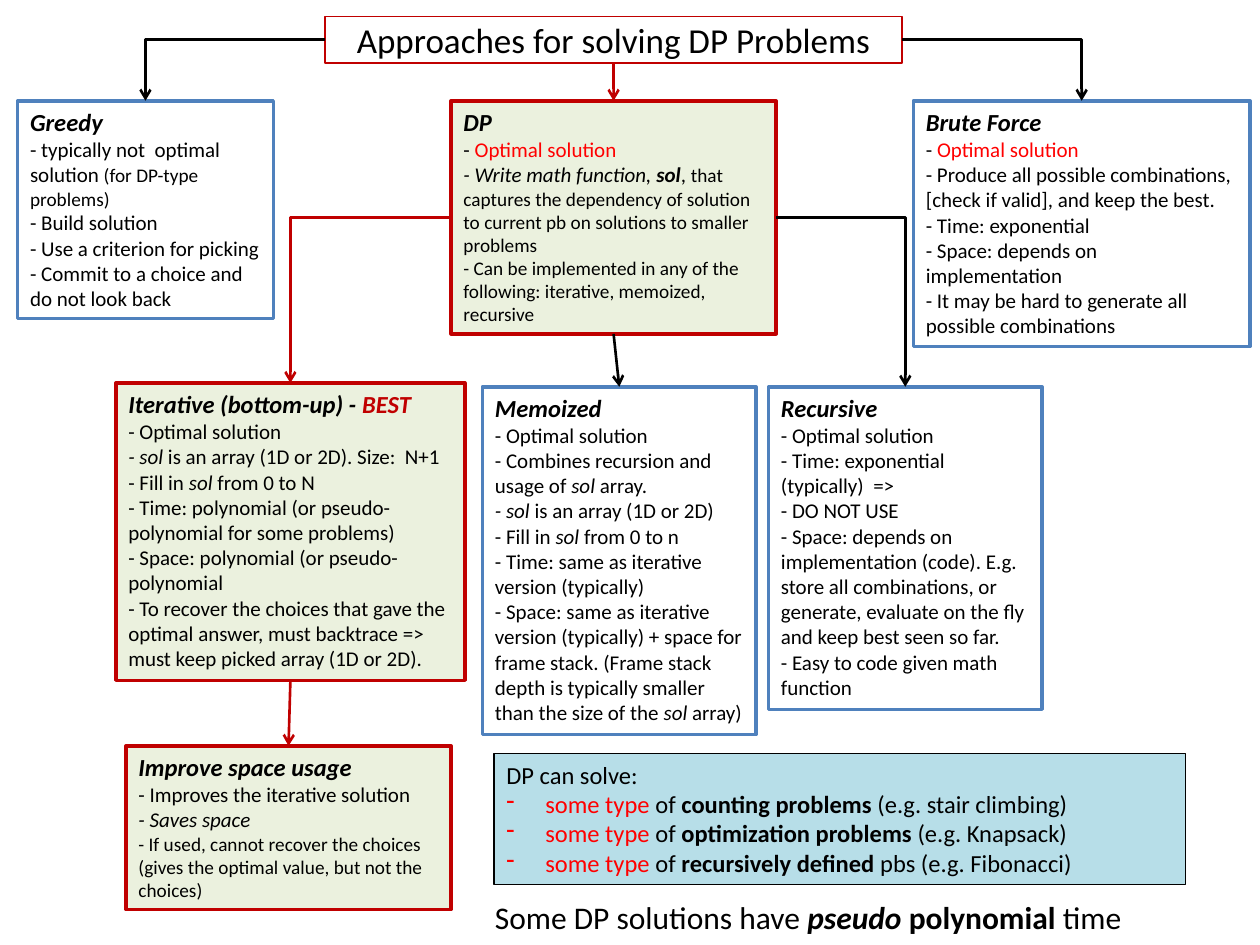
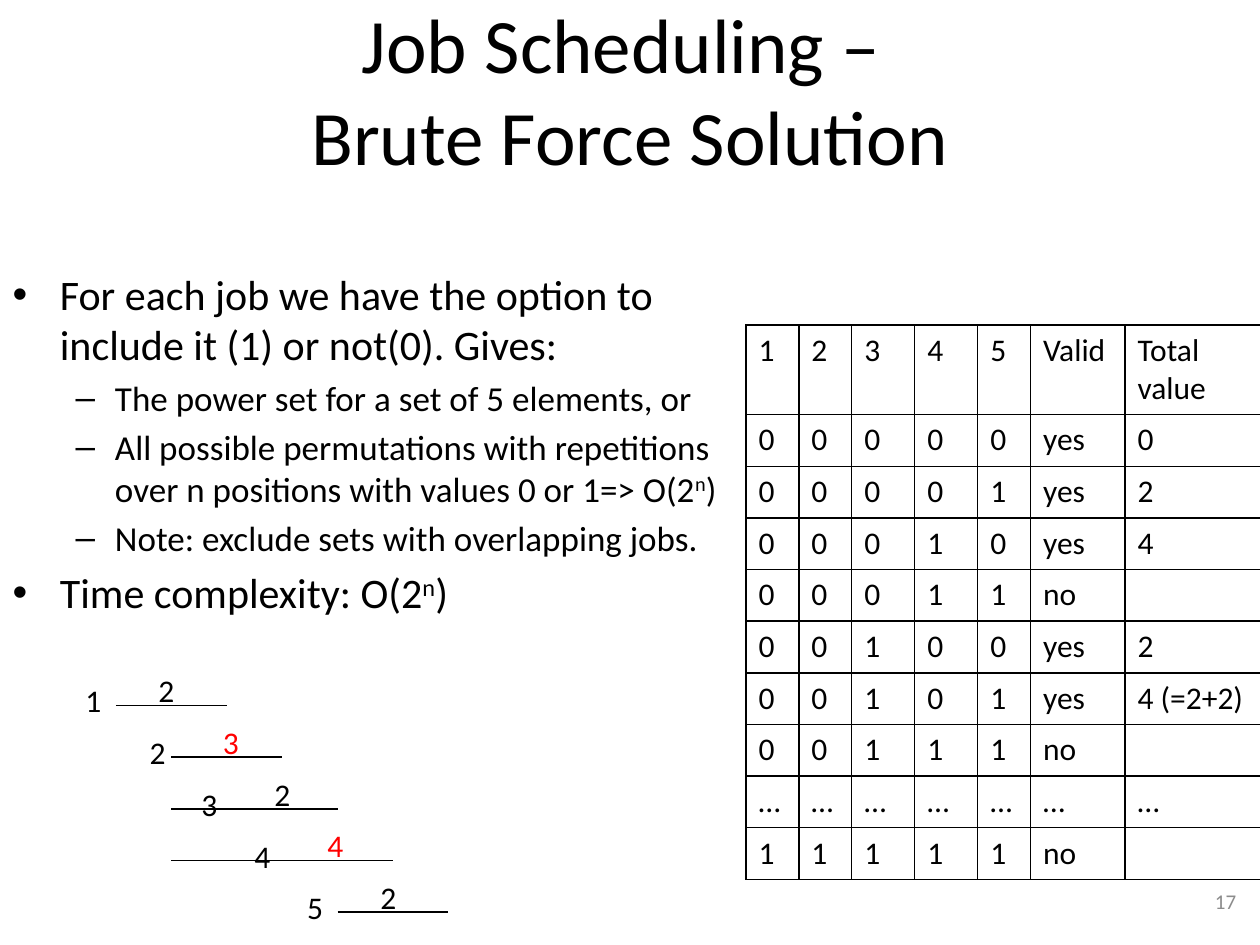
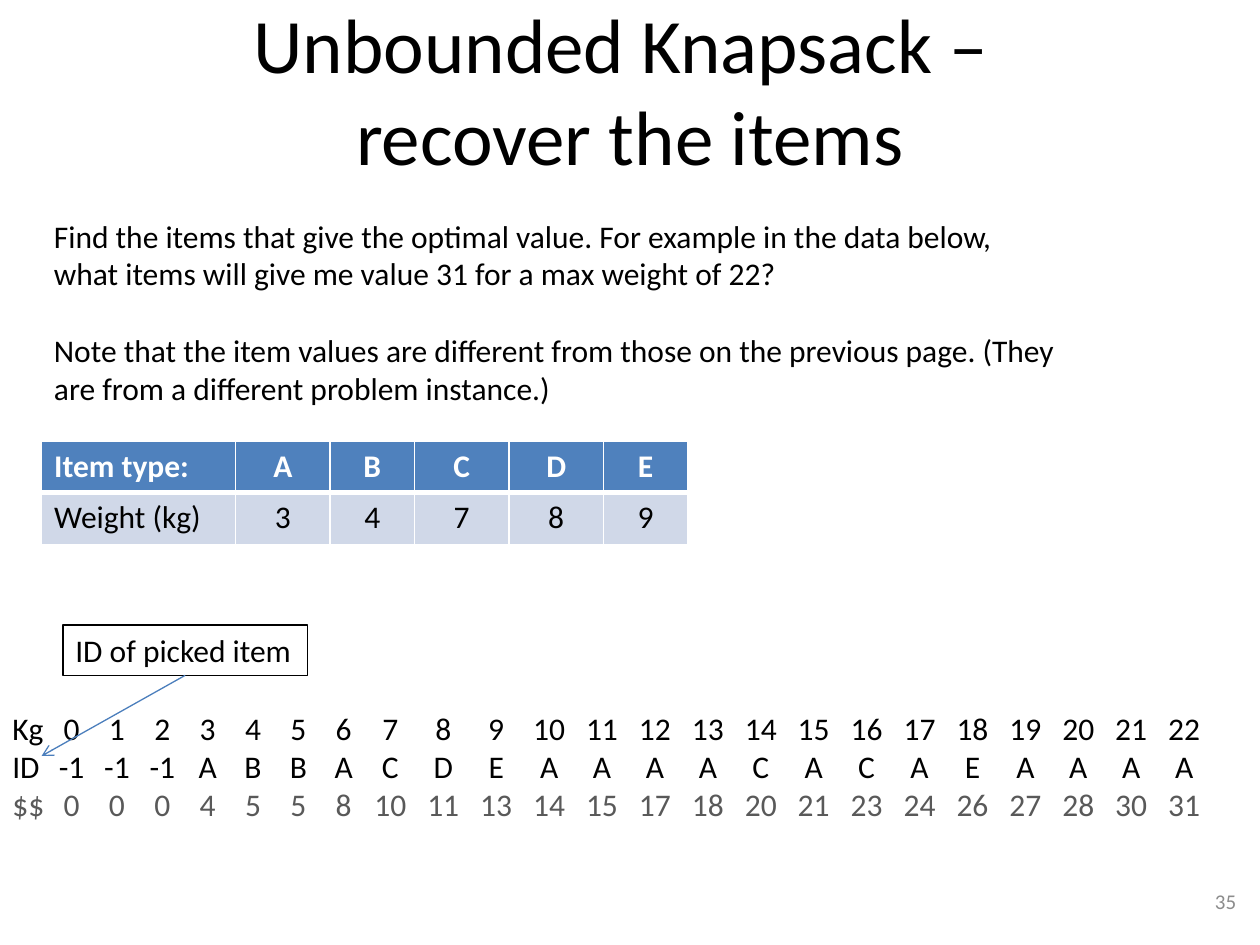
from lxml import etree
from pptx import Presentation
from pptx.dml.color import RGBColor
from pptx.enum.shapes import MSO_CONNECTOR, MSO_SHAPE
from pptx.enum.text import MSO_ANCHOR, MSO_AUTO_SIZE, PP_ALIGN
from pptx.oxml.ns import qn
from pptx.util import Inches, Pt

FONT = "Calibri"
BLACK, WHITE, RED = "000000", "FFFFFF", "FF0000"
BLUE, DARK_RED, PALE_GREEN = "4F81BD", "C00000", "EBF1DE"
PALE_BLUE, CYAN, GRAY, DARK_GRAY = "D0D8E8", "B7DEE8", "8C8C8C", "595959"
PLAIN_TABLE_STYLE = "{2D5ABB26-0587-4C30-8999-92F81FD0307C}"
TOP, LEFT, BOTTOM, RIGHT = range(4)
ITALIC = {"italic": True}
BOLD = {"bold": True}
SMALL = {"size": 11}
RED_TEXT = {"color": RED}
SUPERSCRIPT = {"superscript": True}


def rgb(color):
    return RGBColor.from_string(color)


def box_lengths(box):
    return [Inches(length) for length in box]


def place(shape, box):
    shape.left, shape.top, shape.width, shape.height = box_lengths(box)


def add_run(paragraph, text, size=12, color=BLACK, bold=False, italic=False, superscript=False):
    run = paragraph.add_run()
    run.text = text
    run.font.name = FONT
    run.font.size = Pt(size)
    run.font.color.rgb = rgb(color)
    run.font.bold = bold
    run.font.italic = italic
    if superscript:
        run.font._element.set("baseline", "30000")


def write_runs(paragraph, runs, **style):
    """Write one string, or a list of strings and (string, style) pairs."""
    for run in [runs] if isinstance(runs, str) else runs:
        text, own_style = (run, {}) if isinstance(run, str) else run
        add_run(paragraph, text, **{**style, **own_style})


def write_text(text_frame, lines, align=None, **style):
    for index, runs in enumerate(lines):
        paragraph = text_frame.add_paragraph() if index else text_frame.paragraphs[0]
        paragraph.alignment = align
        write_runs(paragraph, runs, **style)


def add_text(slide, box, lines, wrap=True, **style):
    text_box = slide.shapes.add_textbox(*box_lengths(box))
    text_box.text_frame.word_wrap = wrap
    text_box.text_frame.auto_size = MSO_AUTO_SIZE.SHAPE_TO_FIT_TEXT
    write_text(text_box.text_frame, lines, **style)
    return text_box


def add_frame(slide, box, line, width, fill=None, wrap=True):
    """Add an outlined rectangle ready for left-aligned text."""
    shape = slide.shapes.add_shape(MSO_SHAPE.RECTANGLE, *box_lengths(box))
    shape.shadow.inherit = False
    if fill:
        shape.fill.solid()
        shape.fill.fore_color.rgb = rgb(fill)
    else:
        shape.fill.background()
    shape.line.color.rgb = rgb(line)
    shape.line.width = Pt(width)
    text_frame = shape.text_frame
    text_frame.word_wrap = wrap
    text_frame.auto_size = MSO_AUTO_SIZE.SHAPE_TO_FIT_TEXT
    text_frame.vertical_anchor = MSO_ANCHOR.TOP
    return shape


def add_card(slide, box, heading, lines, preferred=False):
    line, fill = (DARK_RED, PALE_GREEN) if preferred else (BLUE, WHITE)
    card = add_frame(slide, box, line, 2, fill)
    text_frame = card.text_frame
    text_frame.paragraphs[0].alignment = PP_ALIGN.LEFT
    write_runs(text_frame.paragraphs[0], heading, size=14, bold=True, italic=True)
    for runs in lines:
        paragraph = text_frame.add_paragraph()
        paragraph.alignment = PP_ALIGN.LEFT
        write_runs(paragraph, runs)
    return card


def add_arrow(slide, begin, end, color=BLACK, width=1.5, elbow=False):
    """Draw an arrow; each end is a (shape, side) pair or an (x, y) point."""
    kind = MSO_CONNECTOR.ELBOW if elbow else MSO_CONNECTOR.STRAIGHT
    arrow = slide.shapes.add_connector(kind, 0, 0, 0, 0)
    arrow.begin_connect(*begin)
    if isinstance(end[0], float):
        arrow.end_x, arrow.end_y = box_lengths(end)
    else:
        arrow.end_connect(*end)
    arrow.line.color.rgb = rgb(color)
    arrow.line.width = Pt(width)
    properties = arrow._element.spPr
    if elbow:
        properties.find(qn("a:prstGeom")).set("prst", "bentConnector2")
    etree.SubElement(properties.find(qn("a:ln")), qn("a:tailEnd"), type="arrow")
    etree.SubElement(properties, qn("a:effectLst"))


def add_title(slide, box, lines, size=44):
    title = slide.shapes.title
    place(title, box)
    title.text_frame.auto_size = MSO_AUTO_SIZE.NONE
    title.text_frame.vertical_anchor = MSO_ANCHOR.MIDDLE
    paragraph = title.text_frame.paragraphs[0]
    paragraph.alignment = PP_ALIGN.CENTER
    for index, line in enumerate(lines):
        if index:
            paragraph.add_line_break()
        write_runs(paragraph, line, size=size)
    return title


def add_content_frame(slide, title_lines, number):
    """Add the two-line title and the page number of a content slide."""
    add_title(slide, (0.5, 0.08, 9, 1.25), title_lines)
    page = add_text(slide, (7.58, 6.95, 2.33, 0.4), [number], size=12, color=GRAY,
                    align=PP_ALIGN.RIGHT)
    page.text_frame.auto_size = MSO_AUTO_SIZE.NONE
    page.text_frame.vertical_anchor = MSO_ANCHOR.MIDDLE


def add_plain_table(slide, left, top, column_widths, row_count, row_height=0.41):
    box = (left, top, sum(column_widths), row_count * row_height)
    frame = slide.shapes.add_table(row_count, len(column_widths), *box_lengths(box))
    table = frame.table
    table.first_row = table.horz_banding = False
    table._tbl.tblPr.find(qn("a:tableStyleId")).text = PLAIN_TABLE_STYLE
    for column, width in zip(table.columns, column_widths):
        column.width = Inches(width)
    return table


def format_cell(cell, borders, color=BLACK, fill=None):
    """Set borders, a dict from side letter to points, and then the fill."""
    properties = cell._tc.get_or_add_tcPr()
    for side in "LRTB":
        if side in borders:
            line = etree.SubElement(properties, qn("a:ln" + side), w=str(Pt(borders[side])))
            solid = etree.SubElement(line, qn("a:solidFill"))
            etree.SubElement(solid, qn("a:srgbClr"), val=color)
    if fill:
        cell.fill.solid()
        cell.fill.fore_color.rgb = rgb(fill)
    else:
        cell.fill.background()


def add_scope_box(slide, box):
    scope = add_frame(slide, box, BLACK, 0.75, CYAN)
    write_text(scope.text_frame, [
        "DP can solve:",
        [("some type ", RED_TEXT), "of ", ("counting problems", BOLD), " (e.g. stair climbing)"],
        [("some type", RED_TEXT), " of ", ("optimization problems ", BOLD), "(e.g. Knapsack)"],
        [("some type ", RED_TEXT), "of ", ("recursively defined ", BOLD), "pbs (e.g. Fibonacci)"],
    ], size=14, align=PP_ALIGN.LEFT)
    indent = Inches(0.31)
    for paragraph in scope.text_frame.paragraphs[1:]:
        properties = paragraph._p.get_or_add_pPr()
        properties.set("marL", str(indent))
        properties.set("indent", str(-indent))
        etree.SubElement(properties, qn("a:buChar"), char="-")


def build_approaches(slide):
    title = add_title(slide, (2.58, 0.13, 4.58, 0.37), ["Approaches for solving DP Problems"], 20)
    title.line.color.rgb = rgb(DARK_RED)
    title.line.width = Pt(1)

    greedy = add_card(slide, (0.14, 0.8, 2.03, 1.73), "Greedy", [
        ["- typically not  optimal solution ", ("(for DP-type problems)", SMALL)],
        "- Build solution",
        "- Use a criterion for picking",
        "- Commit to a choice and do not look back",
    ])
    brute_force = add_card(slide, (7.25, 0.8, 2.67, 1.95), "Brute Force", [
        ["- ", ("Optimal solution", RED_TEXT)],
        "- Produce all possible combinations, [check if valid], and keep the best.",
        "- Time: exponential",
        "- Space: depends on implementation",
        "- It may be hard to generate all possible combinations",
    ])
    dynamic = add_card(slide, (3.58, 0.8, 2.58, 1.85), "DP", [
        ["- ", ("Optimal solution", RED_TEXT)],
        [("- Write math function, ", ITALIC), ("sol", {**BOLD, **ITALIC}), ", ", ("that", SMALL), " ",
         ("captures the dependency of solution to current pb on solutions to smaller problems",
          SMALL)],
        [("- Can be implemented in any of the following: iterative, memoized, recursive", SMALL)],
    ], preferred=True)
    iterative = add_card(slide, (0.92, 3.04, 2.77, 2.36),
                         ["Iterative (bottom-up) - ", ("BEST", {"color": DARK_RED})], [
        "- Optimal solution",
        [("- sol ", ITALIC), "is an array (1D or 2D). Size:  N+1"],
        ["- Fill in ", ("sol", ITALIC), " from 0 to N"],
        "- Time: polynomial (or pseudo-polynomial for some problems)",
        "- Space: polynomial (or pseudo-polynomial",
        "- To recover the choices that gave the optimal answer, must backtrace => "
        "must keep picked array (1D or 2D).",
    ], preferred=True)
    improved = add_card(slide, (1, 5.92, 2.58, 1.3), "Improve space usage", [
        "- Improves the iterative solution",
        [("- Saves space", ITALIC)],
        [("- If used, cannot recover the choices (gives the optimal value, but not the choices)",
          SMALL)],
    ], preferred=True)
    memoized = add_card(slide, (3.83, 3.07, 2.17, 2.76), "Memoized", [
        "- Optimal solution",
        ["- Combines recursion and usage of ", ("sol", ITALIC), " array."],
        [("- sol ", ITALIC), "is an array (1D or 2D)"],
        ["- Fill in ", ("sol", ITALIC), " from 0 to n"],
        "- Time: same as iterative version (typically)",
        ["- Space: same as iterative version (typically) + space for frame stack. (Frame stack "
         "depth is typically smaller than the size of the ", ("sol", ITALIC), " array)"],
    ])
    recursive = add_card(slide, (6.1, 3.07, 2.17, 2.56), "Recursive", [
        "- Optimal solution",
        "- Time: exponential (typically)  =>",
        "- DO NOT USE",
        "- Space: depends on implementation (code). E.g. store all combinations, or generate, "
        "evaluate on the fly and keep best seen so far.",
        "- Easy to code given math function",
    ])

    add_arrow(slide, (title, LEFT), (greedy, TOP), elbow=True)
    add_arrow(slide, (title, RIGHT), (brute_force, TOP), elbow=True)
    add_arrow(slide, (title, BOTTOM), (dynamic, TOP), DARK_RED)
    add_arrow(slide, (dynamic, LEFT), (iterative, TOP), DARK_RED, elbow=True)
    add_arrow(slide, (dynamic, RIGHT), (recursive, TOP), elbow=True)
    add_arrow(slide, (dynamic, BOTTOM), (memoized, TOP))
    add_arrow(slide, (iterative, BOTTOM), (improved, TOP), DARK_RED)

    add_scope_box(slide, (3.92, 5.98, 5.49, 1.04))
    add_text(slide, (3.83, 7.08, 5.37, 0.4), [
        ["Some DP solutions have ", ("pseudo ", {**BOLD, **ITALIC}), ("polynomial", BOLD), " time"],
    ], wrap=False, size=18)


def add_option_list(slide, box):
    body = slide.placeholders[1]
    place(body, box)
    text_frame = body.text_frame
    text_frame.auto_size = MSO_AUTO_SIZE.NONE
    items = [
        (0, "For each job we have the option to include it (1) or not(0). Gives:"),
        (1, "The power set for a set of 5 elements, or"),
        (1, ["All possible permutations with repetitions over n positions with values 0 or 1=> O(2",
             ("n", SUPERSCRIPT), ")"]),
        (1, "Note: exclude sets with overlapping jobs."),
        (0, ["Time complexity: O(2", ("n", SUPERSCRIPT), ")"]),
    ]
    write_text(text_frame, [""] * len(items))
    for paragraph, (level, runs) in zip(text_frame.paragraphs, items):
        paragraph.clear()
        paragraph.level = level
        write_runs(paragraph, runs, size=20 if level else 24)


def add_subset_table(slide, left, top):
    rows = [
        ["1", "2", "3", "4", "5", "Valid", "Total\nvalue"],
        [*"00000", "yes", "0"],
        [*"00001", "yes", "2"],
        [*"00010", "yes", "4"],
        [*"00011", "no", ""],
        [*"00100", "yes", "2"],
        [*"00101", "yes", "4 (=2+2)"],
        [*"00111", "no", ""],
        ["…"] * 7,
        [*"11111", "no", ""],
    ]
    widths = [0.42, 0.42, 0.5, 0.5, 0.42, 0.75, 1.08]
    table = add_plain_table(slide, left, top, widths, len(rows))
    for row, values in enumerate(rows):
        for column, value in enumerate(values):
            cell = table.cell(row, column)
            write_text(cell.text_frame, value.split("\n"), size=18)
            format_cell(cell, dict.fromkeys("LRTB", 1))


def add_job_timeline(slide, left, top):
    """Draw each job as a ruled span of time slots with its number and value."""
    slot, row_count, column_count, step = 0.44, 4, 6, 0.41
    spans = [range(0, 2), range(1, 3), range(1, 4), range(2, 5), range(4, 6)]
    table = add_plain_table(slide, left, top, [slot] * column_count, row_count, step)
    for row in range(row_count):
        for column in range(column_count):
            edges = {"T": spans[row], "B": spans[row + 1]}
            borders = {side: 1 for side, span in edges.items() if column in span}
            format_cell(table.cell(row, column), borders)

    label_offsets = [0.58, 1.09, 1.5, 1.92, 2.34]
    for index, (label_left, value) in enumerate(zip(label_offsets, "23242")):
        y = top + index * 0.41
        color = RED if value in "34" else BLACK
        add_text(slide, (label_left + 0.58, y - 0.32, 0.33, 0.4), [value], wrap=False, size=18,
                 color=color)
        add_text(slide, (label_left, y - 0.24, 0.33, 0.4), [str(index + 1)], wrap=False, size=18)


def build_job_scheduling(slide):
    add_content_frame(slide, ["Job Scheduling – ", "Brute Force Solution"], "17")
    add_option_list(slide, (0, 2.08, 5.92, 2.75))
    add_subset_table(slide, 5.92, 2.58)
    add_job_timeline(slide, 0.92, 5.6)


def add_item_table(slide, left, top):
    rows = [["Item type:", *"ABCDE"], ["Weight (kg)", *"34789"]]
    table = add_plain_table(slide, left, top, [1.54, 0.75, 0.67, 0.75, 0.75, 0.67], len(rows))
    looks = [
        (WHITE, True, BLUE, {"L": 1, "R": 1, "T": 1, "B": 3}),
        (BLACK, False, PALE_BLUE, {"L": 1, "R": 1, "T": 3, "B": 1}),
    ]
    for row, (values, (color, bold, fill, borders)) in enumerate(zip(rows, looks)):
        for column, value in enumerate(values):
            cell = table.cell(row, column)
            align = PP_ALIGN.CENTER if column else PP_ALIGN.LEFT
            write_text(cell.text_frame, [value], size=18, color=color, bold=bold, align=align)
            format_cell(cell, borders, WHITE, fill)


def add_solution_rows(slide, box):
    """Line up weights, picked items and values on centred tab stops."""
    weights = [str(weight) for weight in range(23)]
    picks = ["-1"] * 3 + list("ABBACDEAAAACACAEAAAA")
    values = "0 0 0 4 5 5 8 10 11 13 14 15 17 18 20 21 23 24 26 27 28 30 31".split()
    lines = ["\t".join(["Kg", *weights]), "\t".join(["ID", *picks]),
             [("\t".join(["$$", *values]), {"color": DARK_GRAY})]]
    solution = add_text(slide, box, lines, size=18)
    stops = [0.47 + 0.36 * index for index in range(7)]
    stops += [3 + 0.42 * index for index in range(16)]
    for paragraph in solution.text_frame.paragraphs:
        tabs = etree.SubElement(paragraph._p.get_or_add_pPr(), qn("a:tabLst"))
        for stop in stops:
            etree.SubElement(tabs, qn("a:tab"), pos=str(Inches(stop)), algn="ctr")


def build_knapsack(slide):
    add_content_frame(slide, ["Unbounded Knapsack – ", "recover the items"], "35")
    add_solution_rows(slide, (0, 5.58, 10, 1.01))
    question = add_text(slide, (0.33, 1.67, 8.17, 1.62), [
        "Find the items that give the optimal value. For example in the data below, "
        "what items will give me value 31 for a max weight of 22?",
        "Note that the item values are different from those on the previous page. "
        "(They are from a different problem instance.)",
    ], size=18)
    question.text_frame.paragraphs[1].space_before = Pt(22)
    add_item_table(slide, 0.33, 3.5)
    label = add_frame(slide, (0.5, 4.96, 1.94, 0.4), BLACK, 0.75, wrap=False)
    write_text(label.text_frame, ["ID of picked item"], size=18, align=PP_ALIGN.LEFT)
    add_arrow(slide, (label, BOTTOM), (0.33, 6.0), "4B7EBC", 0.75)


def main():
    presentation = Presentation()
    presentation.slide_width, presentation.slide_height = Inches(10), Inches(7.5)
    title_only, title_and_body = presentation.slide_layouts[5], presentation.slide_layouts[1]
    build_approaches(presentation.slides.add_slide(title_only))
    build_job_scheduling(presentation.slides.add_slide(title_and_body))
    build_knapsack(presentation.slides.add_slide(title_only))
    presentation.save("out.pptx")


if __name__ == "__main__":
    main()
